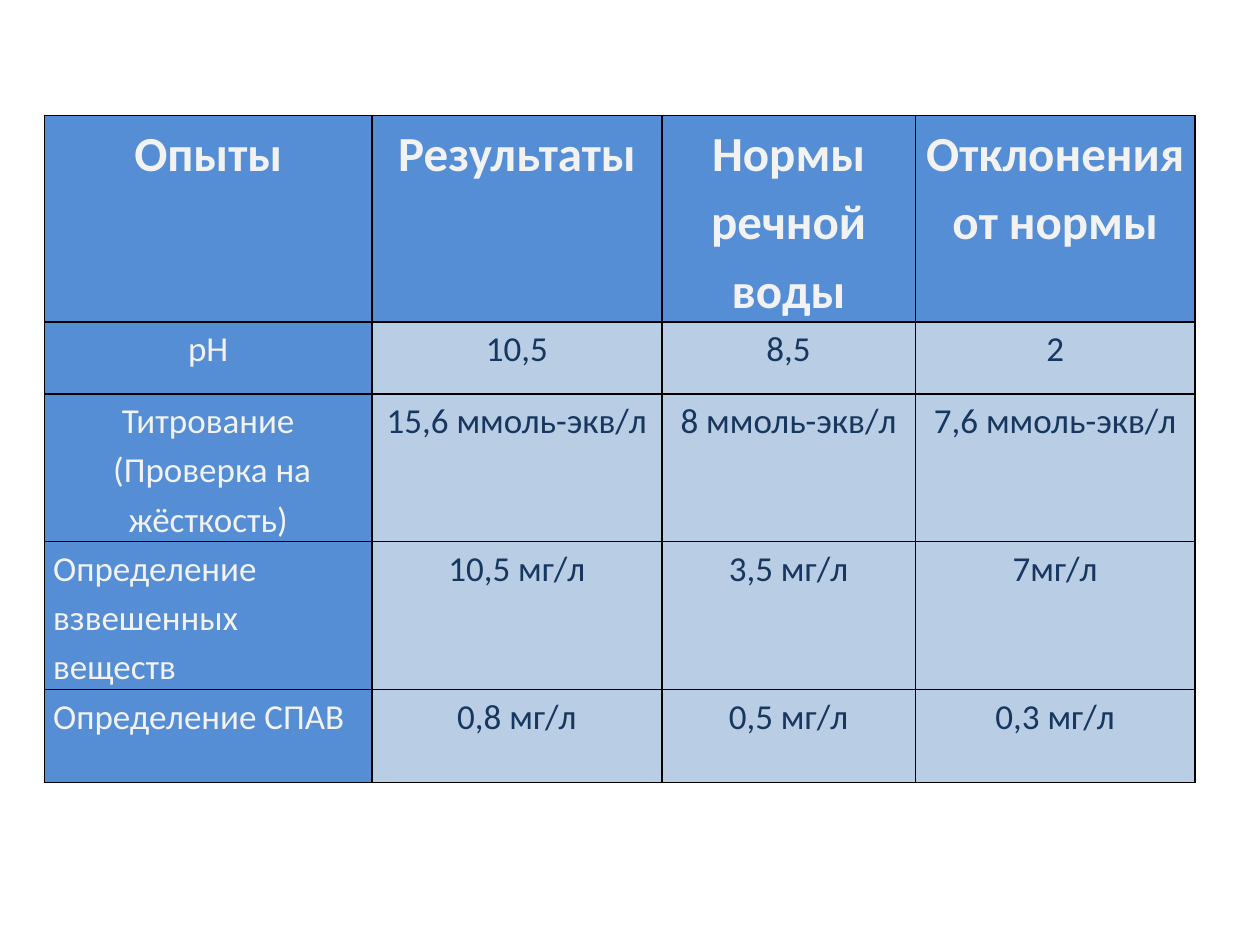
from dataclasses import dataclass

from lxml.etree import SubElement
from pptx import Presentation
from pptx.dml.color import RGBColor
from pptx.enum.text import PP_ALIGN
from pptx.oxml.ns import qn
from pptx.util import Pt


@dataclass(frozen=True)
class Theme:
    font: str = "Calibri"
    header_size: int = 28
    body_size: int = 20
    label_fill: str = "558ED5"
    label_text: str = "F2F2F2"
    value_fill: str = "B9CDE5"
    value_text: str = "17375E"
    border: str = "000000"
    border_width: int = 1
    line_spacing: float = 1.15
    side_margin: int = 5


@dataclass(frozen=True)
class Experiment:
    height: float
    texts: tuple[str, str, str, str]
    label_align: PP_ALIGN = PP_ALIGN.CENTER


THEME = Theme()
LEFT, TOP = 25.4, 66
COLUMN_WIDTHS = (187.2, 165.6, 144.9, 159.8)
ROWS = (
    Experiment(118, ("Опыты", "Результаты", "Нормы\nречной воды", "Отклонения от нормы")),
    Experiment(41, ("рН", "10,5", "8,5", "2")),
    Experiment(84.5, ("Титрование\n (Проверка на жёсткость)", "15,6 ммоль-экв/л",
                      "8 ммоль-экв/л", "7,6 ммоль-экв/л")),
    Experiment(84.5, ("Определение взвешенных веществ", "10,5 мг/л", "3,5 мг/л", "7мг/л"),
               PP_ALIGN.LEFT),
    Experiment(53.3, ("Определение СПАВ", "0,8 мг/л", "0,5 мг/л", "0,3 мг/л"), PP_ALIGN.LEFT),
)


def draw_borders(cell) -> None:
    properties = cell._tc.get_or_add_tcPr()
    for position, side in enumerate(("lnL", "lnR", "lnT", "lnB")):
        line = SubElement(properties, qn(f"a:{side}"), w=str(Pt(THEME.border_width)))
        fill = SubElement(line, qn("a:solidFill"))
        SubElement(fill, qn("a:srgbClr"), val=THEME.border)
        properties.insert(position, line)


def fill_cell(cell, text: str, is_header: bool, is_label: bool, align: PP_ALIGN) -> None:
    cell.fill.solid()
    cell.fill.fore_color.rgb = RGBColor.from_string(
        THEME.label_fill if is_label else THEME.value_fill)
    cell.margin_left = cell.margin_right = Pt(THEME.side_margin)
    cell.margin_top = cell.margin_bottom = Pt(0)
    cell.text_frame.text = text
    for para in cell.text_frame.paragraphs:
        para.alignment = align
        para.line_spacing = THEME.line_spacing
        for span in para.runs:
            span.font.name = THEME.font
            span.font.size = Pt(THEME.header_size if is_header else THEME.body_size)
            span.font.bold = is_header
            span.font.color.rgb = RGBColor.from_string(
                THEME.label_text if is_label else THEME.value_text)
    draw_borders(cell)


def draw_results(page) -> None:
    height = sum(row.height for row in ROWS)
    table = page.shapes.add_table(
        len(ROWS), len(COLUMN_WIDTHS), Pt(LEFT), Pt(TOP),
        Pt(sum(COLUMN_WIDTHS)), Pt(height)).table
    for column, width in zip(table.columns, COLUMN_WIDTHS):
        column.width = Pt(width)
    for row_index, experiment in enumerate(ROWS):
        table.rows[row_index].height = Pt(experiment.height)
        for column_index, text in enumerate(experiment.texts):
            is_header = row_index == 0
            is_first = column_index == 0
            align = experiment.label_align if is_first else PP_ALIGN.CENTER
            fill_cell(table.cell(row_index, column_index), text,
                      is_header, is_header or is_first, align)


def main() -> None:
    deck = Presentation()
    deck.slide_width, deck.slide_height = Pt(720), Pt(540)
    page = deck.slides.add_slide(deck.slide_layouts[6])
    draw_results(page)
    deck.save("out.pptx")


if __name__ == "__main__":
    main()
